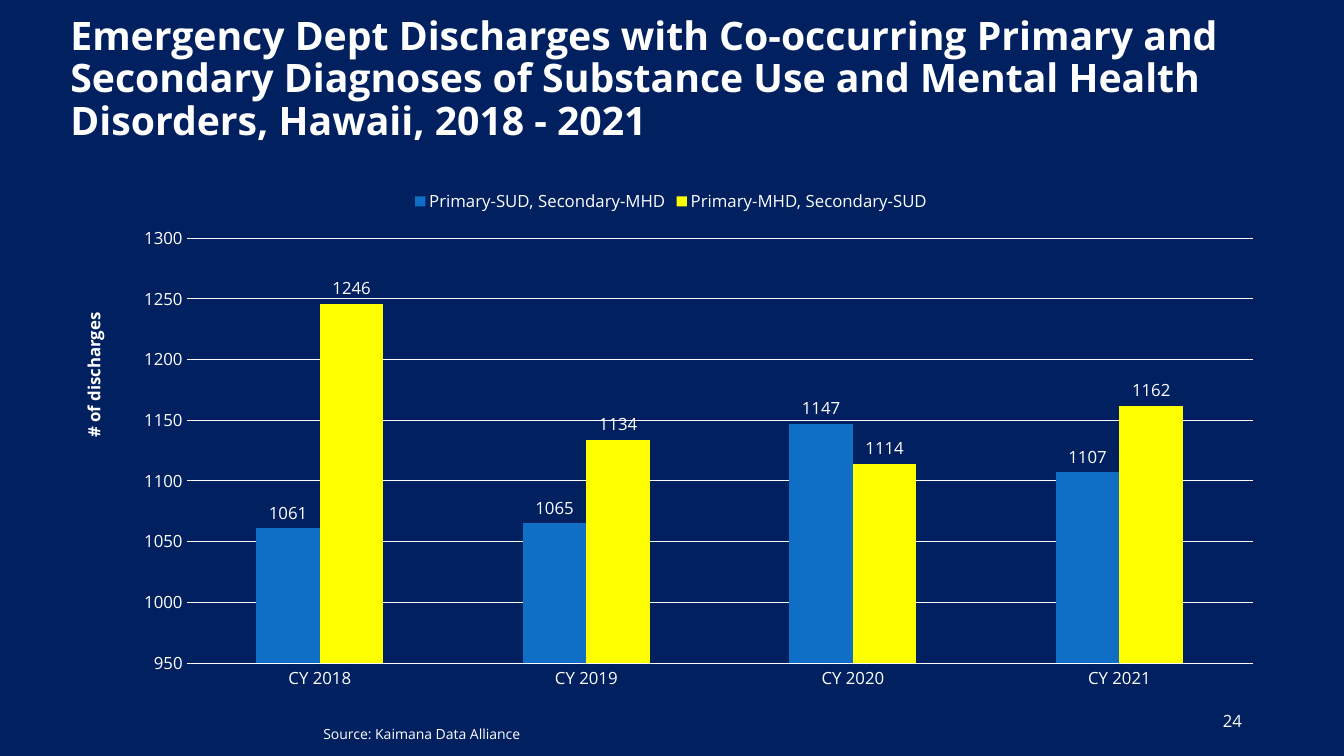
from lxml import etree
from pptx import Presentation
from pptx.chart.data import CategoryChartData
from pptx.dml.color import RGBColor
from pptx.enum.chart import XL_CHART_TYPE, XL_LABEL_POSITION, XL_LEGEND_POSITION, XL_TICK_MARK
from pptx.enum.text import MSO_ANCHOR, PP_ALIGN
from pptx.oxml.ns import qn
from pptx.util import Cm, Pt

COLUMNS = XL_CHART_TYPE.COLUMN_CLUSTERED
OUTSIDE = XL_LABEL_POSITION.OUTSIDE_END
TOP_LEGEND = XL_LEGEND_POSITION.TOP
NO_TICK = XL_TICK_MARK.NONE
LEFT, RIGHT = PP_ALIGN.LEFT, PP_ALIGN.RIGHT
TOP, MIDDLE = MSO_ANCHOR.TOP, MSO_ANCHOR.MIDDLE

FONT = "Open Sans"
COLORS = {"navy": "002060", "white": "FFFFFF", "blue": "0F6FC6", "yellow": "FFFF00"}

TITLE = ("Emergency Dept Discharges with Co-occurring Primary and Secondary Diagnoses "
         "of Substance Use and Mental Health Disorders, Hawaii, 2018 - 2021")
SOURCE = "Source: Kaimana Data Alliance"
PAGE_NUMBER = "24"
AXIS_TITLE = "# of discharges"
YEARS = ["CY 2018", "CY 2019", "CY 2020", "CY 2021"]
DISCHARGES = [
    ("Primary-SUD, Secondary-MHD", "blue", [1061, 1065, 1147, 1107]),
    ("Primary-MHD, Secondary-SUD", "yellow", [1246, 1134, 1114, 1162]),
]
AXIS_RANGE = (950, 1300, 50)

BOXES = {
    "title": (1.52, 0.18, 30.78, 3.68),
    "chart": (1.65, 4.5, 30.53, 13.16),
    "number": (23.93, 17.65, 7.62, 1.02),
    "source": (7.9, 18.16, 11.58, 0.68),
}
PLOT_AREA = {"x": 0.1, "y": 0.114, "w": 0.88, "h": 0.814}
AXIS_TITLE_PLACE = {"x": 0.01, "y": 0.25}


def color(name):
    return RGBColor.from_string(COLORS[name])


def place(name):
    return [Cm(length) for length in BOXES[name]]


def format_font(font, size=12, bold=False):
    font.name = FONT
    font.size = Pt(size)
    font.bold = bold
    font.color.rgb = color("white")


def write_text(frame, text, size=12, bold=False, align=LEFT, anchor=TOP, spacing=1.0):
    frame.word_wrap = True
    frame.vertical_anchor = anchor
    paragraph = frame.paragraphs[0]
    paragraph.alignment = align
    paragraph.line_spacing = spacing
    run = paragraph.add_run()
    run.text = text
    format_font(run.font, size, bold)


def set_layout(parent, index, fractions, inner=False):
    for old in parent.findall(qn("c:layout")):
        parent.remove(old)
    layout = etree.Element(qn("c:layout"))
    parent.insert(index, layout)
    manual = etree.SubElement(layout, qn("c:manualLayout"))
    settings = [("layoutTarget", "inner")] if inner else []
    settings += [("xMode", "edge"), ("yMode", "edge"), *fractions.items()]
    for tag, value in settings:
        etree.SubElement(manual, qn("c:" + tag)).set("val", str(value))


def white_line(line):
    line.color.rgb = color("white")
    line.width = Pt(0.75)


def add_discharge_chart(slide):
    data = CategoryChartData()
    data.categories = YEARS
    for name, _, values in DISCHARGES:
        data.add_series(name, values)
    chart = slide.shapes.add_chart(COLUMNS, *place("chart"), data).chart
    format_font(chart.font, 10)
    chart.has_title = False
    chart.has_legend = True
    chart.legend.position = TOP_LEGEND
    chart.legend.include_in_layout = False
    format_font(chart.legend.font)

    plot = chart.plots[0]
    plot.gap_width = 219
    plot.overlap = 0
    plot.vary_by_categories = False
    for series, (_, fill, _) in zip(plot.series, DISCHARGES):
        series.format.fill.solid()
        series.format.fill.fore_color.rgb = color(fill)
        series.invert_if_negative = False
        labels = series.data_labels
        labels.show_value = True
        labels.position = OUTSIDE
        format_font(labels.font)

    category_axis, value_axis = chart.category_axis, chart.value_axis
    for axis in (category_axis, value_axis):
        axis.major_tick_mark = axis.minor_tick_mark = NO_TICK
        format_font(axis.tick_labels.font)
    white_line(category_axis.format.line)
    value_axis.format.line.fill.background()
    value_axis.has_major_gridlines = True
    white_line(value_axis.major_gridlines.format.line)
    value_axis.minimum_scale, value_axis.maximum_scale, value_axis.major_unit = AXIS_RANGE

    axis_title = value_axis.axis_title
    write_text(axis_title.text_frame, AXIS_TITLE, bold=True)
    axis_title.text_frame._txBody.find(qn("a:bodyPr")).set("rot", "-5400000")
    set_layout(axis_title._element, 1, AXIS_TITLE_PLACE)
    set_layout(chart._chartSpace.chart.plotArea, 0, PLOT_AREA, inner=True)


def main():
    presentation = Presentation()
    presentation.slide_width, presentation.slide_height = Cm(33.87), Cm(19.05)
    slide = presentation.slides.add_slide(presentation.slide_layouts[5])
    slide.background.fill.solid()
    slide.background.fill.fore_color.rgb = color("navy")

    title = slide.shapes.title
    title.left, title.top, title.width, title.height = place("title")
    write_text(title.text_frame, TITLE, size=28, bold=True, anchor=MIDDLE, spacing=0.9)
    add_discharge_chart(slide)
    number = slide.shapes.add_textbox(*place("number"))
    write_text(number.text_frame, PAGE_NUMBER, align=RIGHT, anchor=MIDDLE)
    source = slide.shapes.add_textbox(*place("source"))
    write_text(source.text_frame, SOURCE, size=10)
    presentation.save("out.pptx")


if __name__ == "__main__":
    main()
